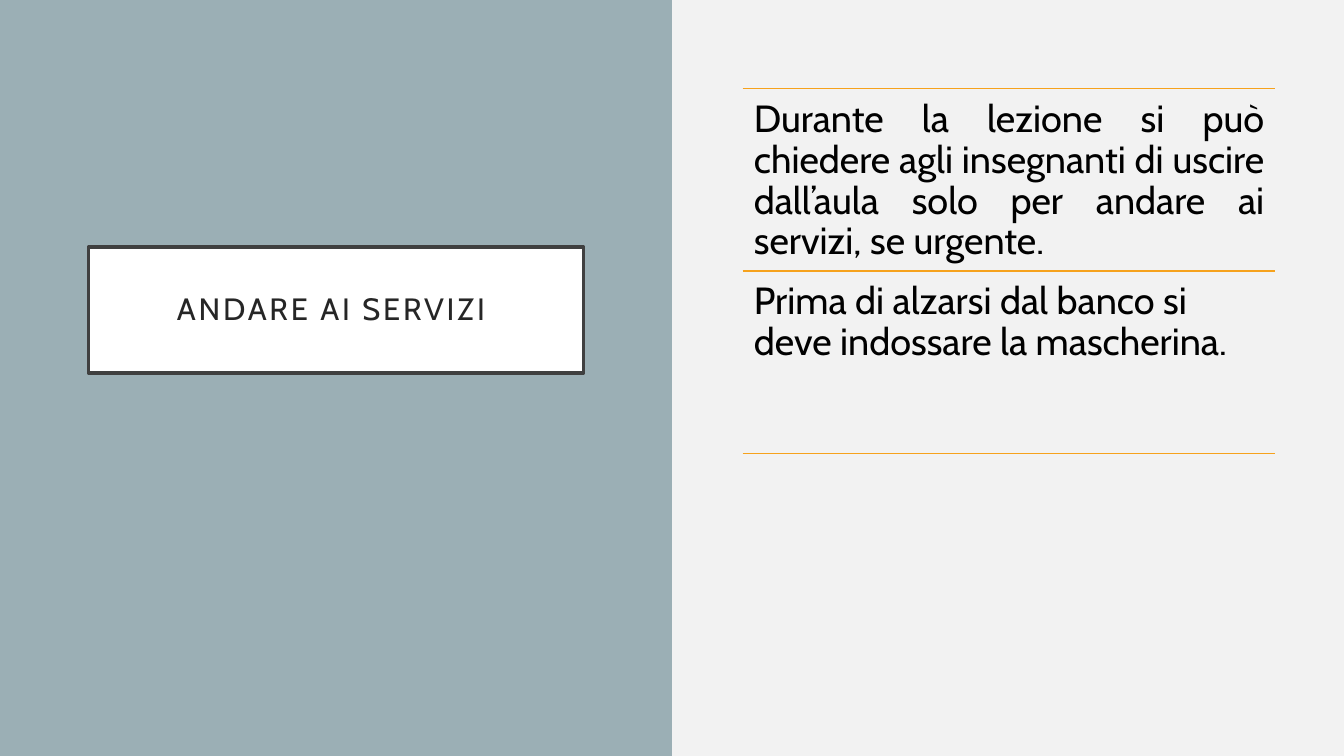
import pptx
import pptx.dml.color
import pptx.enum.shapes
import pptx.enum.text
import pptx.util
from lxml import etree

Pt = pptx.util.Pt
RGBColor = pptx.dml.color.RGBColor
PP_ALIGN = pptx.enum.text.PP_ALIGN
MSO_ANCHOR = pptx.enum.text.MSO_ANCHOR

# Content
TITLE = "ANDARE AI SERVIZI "
RULES = [
    ("Durante la lezione si può chiedere agli insegnanti di uscire dall’aula "
     "solo per andare ai servizi, se urgente.", PP_ALIGN.JUSTIFY),
    ("Prima di alzarsi dal banco si deve indossare la mascherina.", PP_ALIGN.LEFT),
]

# Style
FONT = "Cabin"
BACKGROUND = RGBColor(0xF2, 0xF2, 0xF2)
PANEL = RGBColor(0x9B, 0xAF, 0xB5)
WHITE = RGBColor(0xFF, 0xFF, 0xFF)
FRAME = RGBColor(0x40, 0x40, 0x40)
TITLE_TEXT = RGBColor(0x26, 0x26, 0x26)
BLACK = RGBColor(0, 0, 0)
ORANGE = RGBColor(0xF6, 0xA2, 0x1D)

# Layout in points
SLIDE_WIDTH, SLIDE_HEIGHT = 960, 540
TITLE_BOX = (63.2, 176.6, 353.6, 90)
LIST_LEFT, LIST_TOP, LIST_WIDTH = 530.5, 63.2, 380.5
ROW_HEIGHT = 130.4


def write_text(shape, text, size, color, alignment, inset, anchor):
    frame = shape.text_frame
    frame.word_wrap = True
    frame.auto_size = pptx.enum.text.MSO_AUTO_SIZE.NONE
    frame.vertical_anchor = anchor
    frame.margin_left = frame.margin_right = Pt(inset)
    frame.margin_top = frame.margin_bottom = Pt(inset)
    paragraph = frame.paragraphs[0]
    paragraph.alignment = alignment
    paragraph.line_spacing = 0.9
    run = paragraph.add_run()
    run.text = text
    run.font.name = FONT
    run.font.size = Pt(size)
    run.font.color.rgb = color
    return run


def add_divider(slide, top):
    line = slide.shapes.add_connector(
        pptx.enum.shapes.MSO_CONNECTOR.STRAIGHT,
        Pt(LIST_LEFT), Pt(top), Pt(LIST_LEFT + LIST_WIDTH), Pt(top))
    line.line.color.rgb = ORANGE
    line.line.width = Pt(1)
    etree.SubElement(line.element.spPr, pptx.oxml.ns.qn("a:effectLst"))


def main():
    presentation = pptx.Presentation()
    presentation.slide_width = Pt(SLIDE_WIDTH)
    presentation.slide_height = Pt(SLIDE_HEIGHT)
    slide = presentation.slides.add_slide(presentation.slide_layouts[5])
    slide.background.fill.solid()
    slide.background.fill.fore_color.rgb = BACKGROUND

    # Left panel, placed behind the title
    title = slide.shapes.title
    panel = slide.shapes.add_shape(
        pptx.enum.shapes.MSO_SHAPE.RECTANGLE,
        0, 0, Pt(SLIDE_WIDTH / 2), Pt(SLIDE_HEIGHT))
    panel.shadow.inherit = False
    panel.fill.solid()
    panel.fill.fore_color.rgb = PANEL
    panel.line.fill.background()
    title.element.addprevious(panel.element)

    # Framed title
    title.left, title.top, title.width, title.height = map(Pt, TITLE_BOX)
    title.fill.solid()
    title.fill.fore_color.rgb = WHITE
    title.line.color.rgb = FRAME
    title.line.width = Pt(2.5)
    run = write_text(title, TITLE, 22, TITLE_TEXT, PP_ALIGN.CENTER, 14.4, MSO_ANCHOR.MIDDLE)
    run.font.element.set("spc", "200") if hasattr(run.font, "element") else \
        run.font._element.set("spc", "200")

    # Rules, each below a divider, with one more divider at the end
    for index, (text, alignment) in enumerate(RULES):
        top = LIST_TOP + index * ROW_HEIGHT
        add_divider(slide, top)
        box = slide.shapes.add_textbox(
            Pt(LIST_LEFT), Pt(top), Pt(LIST_WIDTH), Pt(ROW_HEIGHT))
        write_text(box, text, 27, BLACK, alignment, 8, MSO_ANCHOR.TOP)
    add_divider(slide, LIST_TOP + len(RULES) * ROW_HEIGHT)

    presentation.save("out.pptx")


if __name__ == "__main__":
    main()
